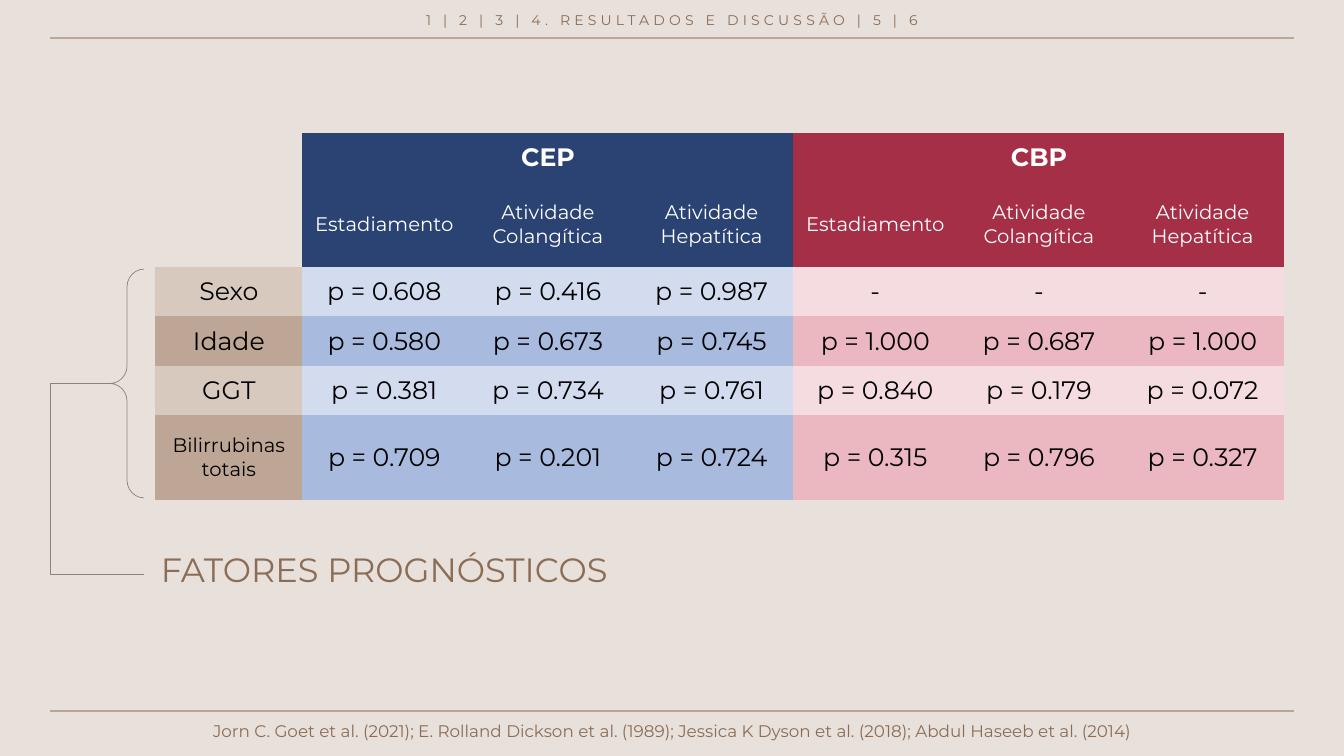
from pptx import Presentation
from pptx.dml.color import RGBColor
from pptx.enum.shapes import MSO_CONNECTOR, MSO_SHAPE
from pptx.enum.text import MSO_ANCHOR, PP_ALIGN
from pptx.oxml.ns import qn
from pptx.util import Inches, Pt
from lxml.etree import SubElement

HUES = {
    "back": "E8E0DA", "text": "8B6D56", "rule": "BDA695", "brace": "938177",
    "white": "FFFFFF", "black": "000000", "navy": "2B4373", "wine": "A42F46",
}
# Light and dark row fills for the label, CEP and CBP columns
BANDS = [("D7C9BE", "BDA695"), ("D3DCEF", "A8BADE"), ("F5DCE0", "EBB8C2")]
WIDE, HIGH = 13.33, 7.5
EDGE = 0.5
NO_GRID = "{2D5ABB26-0587-4C30-8999-92F81FD0307C}"


def style(frame, text, size, hue, bold=False):
    """Fill a text frame with one centred paragraph and return it."""
    frame.word_wrap = True
    para = frame.paragraphs[0]
    para.text = text
    para.alignment = PP_ALIGN.CENTER
    font = para.font
    font.name, font.size, font.bold = "Montserrat", Pt(size), bold
    font.color.rgb = RGBColor.from_string(HUES[hue])
    return para


def rule(x1, y1, x2, y2, hue, width):
    line = slide.shapes.add_connector(
        MSO_CONNECTOR.STRAIGHT, Inches(x1), Inches(y1), Inches(x2), Inches(y2))
    line.line.color.rgb = RGBColor.from_string(HUES[hue])
    line.line.width = Pt(width)
    SubElement(line._element.spPr, qn("a:effectLst"))


deck = Presentation()
deck.slide_width, deck.slide_height = Inches(WIDE), Inches(HIGH)
slide = deck.slides.add_slide(deck.slide_layouts[5])
slide.background.fill.solid()
slide.background.fill.fore_color.rgb = RGBColor.from_string(HUES["back"])

# Section trail and page rules
title = slide.shapes.title
title.left, title.top = Inches(EDGE), Inches(0.08)
title.width, title.height = Inches(WIDE - 2 * EDGE), Inches(0.25)
title.text_frame.vertical_anchor = MSO_ANCHOR.MIDDLE
trail = style(title.text_frame, "1 | 2 | 3 | 4. RESULTADOS E DISCUSSÃO | 5 | 6",
              10, "text")
trail.line_spacing = 0.9
trail.runs[0].font._element.set("spc", "300")
for y in (0.38, 7.05):
    rule(EDGE, y, WIDE - EDGE, y, "rule", 1.5)

# Table of p values
heads = ["Estadiamento", "Atividade Colangítica", "Atividade Hepatítica"]
rows = [
    ["", "CEP", "", "", "CBP", "", ""],
    [""] + heads * 2,
    ["Sexo", "0.608", "0.416", "0.987", "-", "-", "-"],
    ["Idade", "0.580", "0.673", "0.745", "1.000", "0.687", "1.000"],
    ["GGT", "0.381", "0.734", "0.761", "0.840", "0.179", "0.072"],
    ["Bilirrubinas totais", "0.709", "0.201", "0.724", "0.315", "0.796", "0.327"],
]
left, top, width, label = 1.54, 1.32, 11.2, 1.46
tall = [0.49, 0.84, 0.49, 0.49, 0.49, 0.84]
foot = top + sum(tall)
table = slide.shapes.add_table(
    len(rows), len(rows[0]), Inches(left), Inches(top),
    Inches(width), Inches(sum(tall))).table
table.first_row = table.horz_banding = False
table._tbl.tblPr.find(qn("a:tableStyleId")).text = NO_GRID
for c, col in enumerate(table.columns):
    col.width = Inches((width - label) / 6 if c else label)
for c in (1, 4):
    table.cell(0, c).merge(table.cell(0, c + 2))

for r, row in enumerate(rows):
    table.rows[r].height = Inches(tall[r])
    for c, text in enumerate(row):
        cell = table.cell(r, c)
        group = (c + 2) // 3
        head = r < 2
        if head:
            fill = HUES[("back", "navy", "wine")[group]]
        else:
            fill = BANDS[group][r % 2]
        cell.fill.solid()
        cell.fill.fore_color.rgb = RGBColor.from_string(fill)
        cell.vertical_anchor = MSO_ANCHOR.MIDDLE
        if not text:
            continue
        if text[0].isdigit():
            text = f"p = {text}"
        small = r == 1 or text.startswith("Bilirrubinas")
        style(cell.text_frame, text, 14 if small else 18,
              "white" if head else "black", bold=r == 0)

# Brace around the rows, led down to its label
tip, end = 1.09, 1.43
start = top + sum(tall[:2])
mid, low = (start + foot) / 2, 5.7
brace = slide.shapes.add_shape(
    MSO_SHAPE.LEFT_BRACE, Inches(tip), Inches(start + 0.02),
    Inches(end - tip), Inches(foot - start - 0.04))
brace.adjustments[0] = 0.516
brace.shadow.inherit = False
brace.fill.background()
brace.line.color.rgb = RGBColor.from_string(HUES["brace"])
brace.line.width = Pt(0.5)
for ends in ((tip, mid, EDGE, mid), (EDGE, mid, EDGE, low), (end, low, EDGE, low)):
    rule(*ends, "brace", 0.5)

# Label and sources
notes = [
    (end, low - 0.3, 4.76, 0.61, "FATORES PROGNÓSTICOS", 24),
    (0.2, 7.1, 12.94, 0.3,
     "Jorn C. Goet et al. (2021); E. Rolland Dickson et al. (1989); "
     "Jessica K Dyson et al. (2018); Abdul Haseeb et al. (2014)", 12),
]
for x, y, w, h, text, size in notes:
    box = slide.shapes.add_textbox(Inches(x), Inches(y), Inches(w), Inches(h))
    style(box.text_frame, text, size, "text")

deck.save("out.pptx")
